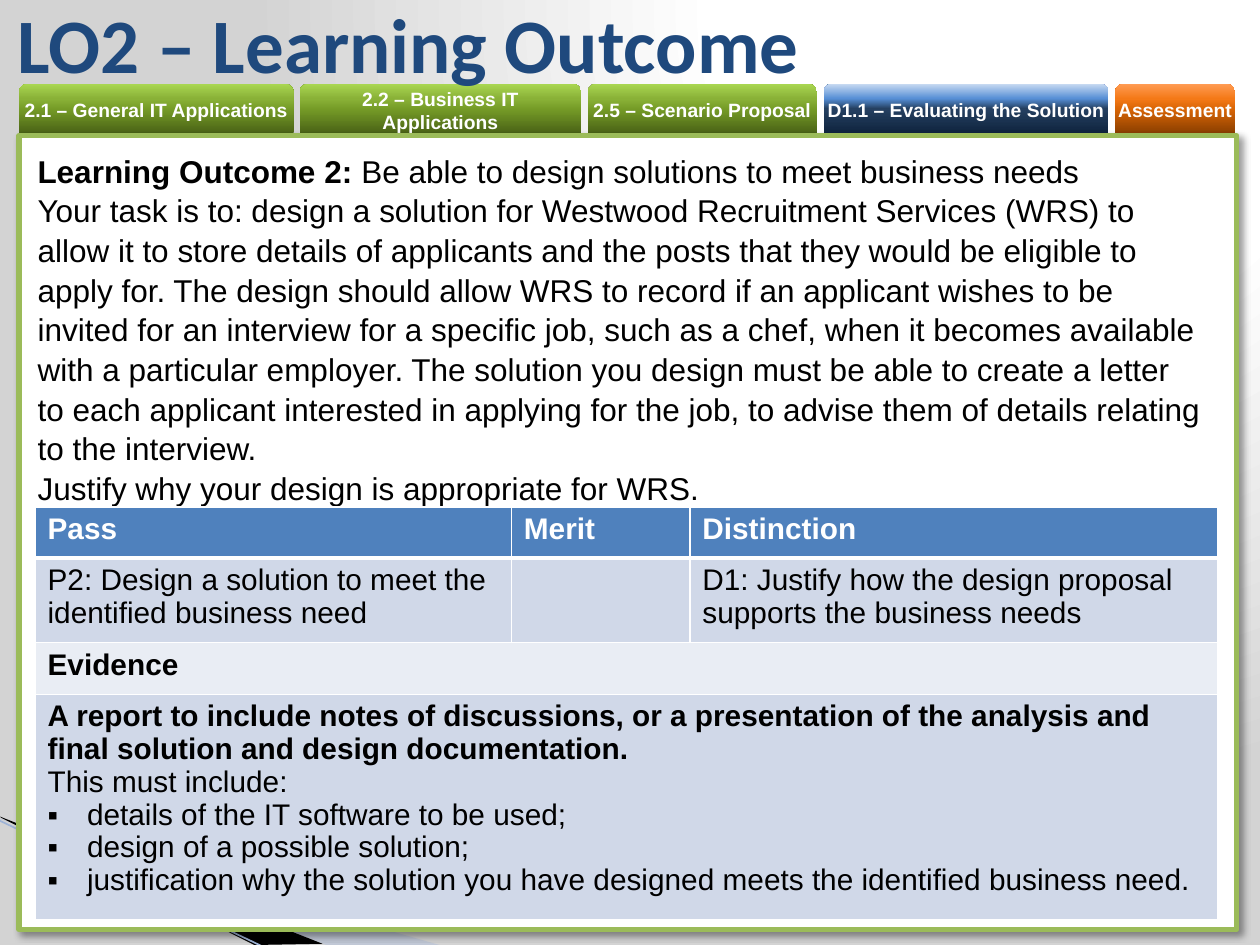
from lxml.etree import SubElement as Sub
from pptx import Presentation
from pptx.dml.color import RGBColor
from pptx.enum.shapes import MSO_CONNECTOR as Conn, MSO_SHAPE as Kind
from pptx.enum.text import MSO_ANCHOR as Anchor, MSO_AUTO_SIZE as Auto, PP_ALIGN as Align
from pptx.oxml.ns import qn
from pptx.util import Pt

GREEN = [(0, "4A6316"), (50, "769C27"), (70, "89B137"), (100, "A9D651")]
BLUE = [(0, "0F243E"), (50, "254061"), (70, "558ED5"), (100, "C6D9F1")]
ORANGE = [(0, "8B3F00"), (50, "DA6606"), (70, "F47917"), (100, "FF9C54")]
GREY = [(0, "FFFFFF"), (40, "FFFFFF"), (100, "D3D3D3")]

TABS = [  # label, left, width, stops
    ("2.1 – General IT Applications", 10.8, 157, GREEN),
    ("2.2 – Business IT Applications", 171.2, 161, GREEN),
    ("2.5 – Scenario Proposal", 335.8, 131, GREEN),
    ("D1.1 – Evaluating the Solution", 470.6, 163, BLUE),
    ("Assessment", 637.2, 68.6, ORANGE),
]
TASK = (
    "Your task is to: design a solution for Westwood Recruitment Services (WRS) to allow it "
    "to store details of applicants and the posts that they would be eligible to apply for. "
    "The design should allow WRS to record if an applicant wishes to be invited for an "
    "interview for a specific job, such as a chef, when it becomes available with a "
    "particular employer. The solution you design must be able to create a letter to each "
    "applicant interested in applying for the job, to advise them of details relating to "
    "the interview."
)
REPORT = (
    "A report to include notes of discussions, or a presentation of the analysis and "
    "final solution and design documentation."
)
NEEDS = [
    "details of the IT software to be used;",
    "design of a possible solution;",
    "justification why the solution you have designed meets the identified business need.",
]


def rgb(code):
    return RGBColor.from_string(code)


def box(left, top, wide, high):
    return Pt(left), Pt(top), Pt(wide), Pt(high)


def place(item, *area):
    item.left, item.top, item.width, item.height = box(*area)


def tint(node, code, alpha=100):
    """Add a colour to an XML node."""
    clr = Sub(node, qn("a:srgbClr"), val=code)
    if alpha < 100:
        Sub(clr, qn("a:alpha"), val=str(alpha * 1000))


def blend(fill, root, stops, focus=None):
    """Fill with stops, upwards or round a focus (l, t, r, b in percent)."""
    fill.gradient()
    grad = next(root.iter(qn("a:gradFill")))
    for kid in list(grad):
        grad.remove(kid)
    steps = Sub(grad, qn("a:gsLst"))
    for pos, code in stops:
        tint(Sub(steps, qn("a:gs"), pos=str(pos * 1000)), code)
    if focus:
        way = Sub(grad, qn("a:path"), path="circle")
        Sub(way, qn("a:fillToRect"), **{s: str(v * 1000) for s, v in zip("ltrb", focus)})
    else:
        Sub(grad, qn("a:lin"), ang=str(270 * 60000), scaled="0")


def write(frame, text, size=18, font="Arial", color="000000", bold=False,
          align=Align.LEFT, space=None, bullet=None, more=False):
    """Write one paragraph; more adds it below those already there."""
    para = frame.add_paragraph() if more else frame.paragraphs[0]
    para.alignment = align
    if space:
        para.line_spacing = space
    if bullet:
        props = para._p.get_or_add_pPr()
        props.set("marL", str(Pt(22.5)))
        props.set("indent", str(-Pt(22.5)))
        Sub(props, qn("a:buFont"), typeface="Arial")
        Sub(props, qn("a:buChar"), char=bullet)
    parts = [(text, bold)] if isinstance(text, str) else text
    for words, heavy in parts:
        run = para.add_run()
        run.text = words
        run.font.size, run.font.name, run.font.bold = Pt(size), font, heavy
        run.font.color.rgb = rgb(color)


def wedge(slide, points, color, alpha=100):
    build = slide.shapes.build_freeform(Pt(points[0][0]), Pt(points[0][1]))
    build.add_line_segments([(Pt(x), Pt(y)) for x, y in points[1:]])
    shape = build.convert_to_shape()
    shape.shadow.inherit = False
    shape.line.fill.background()
    shape.fill.solid()
    shape.fill.fore_color.rgb = rgb(color)
    if alpha < 100:
        clr = next(shape.element.spPr.iter(qn("a:srgbClr")))
        Sub(clr, qn("a:alpha"), val=str(alpha * 1000))


def stroke(slide, start, end, color, width):
    line = slide.shapes.add_connector(Conn.STRAIGHT, *box(*start, *end))
    line.line.color.rgb, line.line.width = rgb(color), Pt(width)
    Sub(line.element.spPr, qn("a:effectLst"))


def tab(slide, label, left, wide, stops):
    shape = slide.shapes.add_shape(Kind.ROUND_2_SAME_RECTANGLE, *box(left, 48, wide, 28.2))
    shape.shadow.inherit = False
    shape.line.fill.background()
    blend(shape.fill, shape.element, stops)
    frame = shape.text_frame
    frame.margin_left = frame.margin_right = frame.margin_top = frame.margin_bottom = 0
    frame.word_wrap, frame.vertical_anchor = True, Anchor.MIDDLE
    write(frame, label, size=11, color="FFFFFF", bold=True, align=Align.CENTER)


def panel(slide):
    shape = slide.shapes.add_shape(Kind.RECTANGLE, *box(10.8, 77.6, 696, 453.6))
    shape.fill.solid()
    shape.fill.fore_color.rgb = rgb("FFFFFF")
    shape.line.color.rgb, shape.line.width = rgb("9BBB59"), Pt(3)
    glow = Sub(shape.element.spPr, qn("a:effectLst"))
    cast = Sub(glow, qn("a:outerShdw"), blurRad=str(Pt(4)), dist=str(Pt(3)),
               dir=str(45 * 60000), algn="tl", rotWithShape="0")
    tint(cast, "000000", 40)


def dress(cell, color, low=1):
    """Give a cell white borders and a fill."""
    props = cell._tc.get_or_add_tcPr()
    for side, width in (("L", 1), ("R", 1), ("T", 1), ("B", low)):
        edge = Sub(props, qn("a:ln" + side), w=str(Pt(width)))
        tint(Sub(edge, qn("a:solidFill")), "FFFFFF")
    cell.fill.solid()
    cell.fill.fore_color.rgb = rgb(color)


def grades(slide):
    table = slide.shapes.add_table(4, 3, *box(20, 289.6, 676, 236)).table
    for col, wide in zip(table.columns, (272.2, 102, 301.8)):
        col.width = Pt(wide)
    for row, high in zip(table.rows, (29.2, 48.4, 29.6, 128.8)):
        row.height = Pt(high)
    for row, color in enumerate(("4F81BD", "D0D8E8", "E9EDF4", "D0D8E8")):
        for col in range(3):
            dress(table.cell(row, col), color, low=1 if row else 3)
    for row in (2, 3):
        table.cell(row, 0).merge(table.cell(row, 2))

    def put(row, col, text, **form):
        write(table.cell(row, col).text_frame, text, size=17, space=0.98, **form)

    for col, head in enumerate(("Pass", "Merit", "Distinction")):
        put(0, col, head, color="FFFFFF", bold=True)
    put(1, 0, "P2: Design a solution to meet the identified business need")
    put(1, 2, "D1: Justify how the design proposal supports the business needs")
    put(2, 0, "Evidence", bold=True)
    put(3, 0, REPORT, bold=True)
    put(3, 0, "This must include:", more=True)
    for need in NEEDS:
        put(3, 0, need, bullet="▪", more=True)


def main():
    deck = Presentation()
    deck.slide_width, deck.slide_height = Pt(720), Pt(540)
    slide = deck.slides.add_slide(deck.slide_layouts[5])

    # Background and corner stripes
    blend(slide.background.fill, slide.element, GREY, focus=(65, 0, 0, 98))
    wedge(slide, [(-0.7, 468), (251.3, 540), (186.5, 540), (-0.7, 467.3)], "A7B9DB", 40)
    wedge(slide, [(0, 466.6), (184.3, 539.3), (145.4, 540), (0.7, 467.3)], "000000")
    stroke(slide, (-0.7, 468.7), (151.2, 541.4), "9EB3D6", 0.95)

    # Tabs and panel
    for item in TABS:
        tab(slide, *item)
    panel(slide)

    # Task text
    frame = slide.shapes.add_textbox(*box(14.4, 82, 681, 204)).text_frame
    frame.word_wrap = True
    write(frame, [("Learning Outcome 2: ", True),
                  ("Be able to design solutions to meet business needs", False)], space=1.05)
    for text in (TASK, "Justify why your design is appropriate for WRS."):
        write(frame, text, space=1.05, more=True)

    # Title, in front of the tabs
    title = slide.shapes.title
    place(title, 2.9, 0, 623.5, 49)
    title.text_frame.auto_size = Auto.NONE
    title.text_frame.vertical_anchor = Anchor.MIDDLE
    write(title.text_frame, "LO2 – Learning Outcome", size=44, font="Calibri",
          color="1F497D", bold=True)
    slide.shapes.element.append(title.element)

    grades(slide)
    deck.save("out.pptx")


if __name__ == "__main__":
    main()
